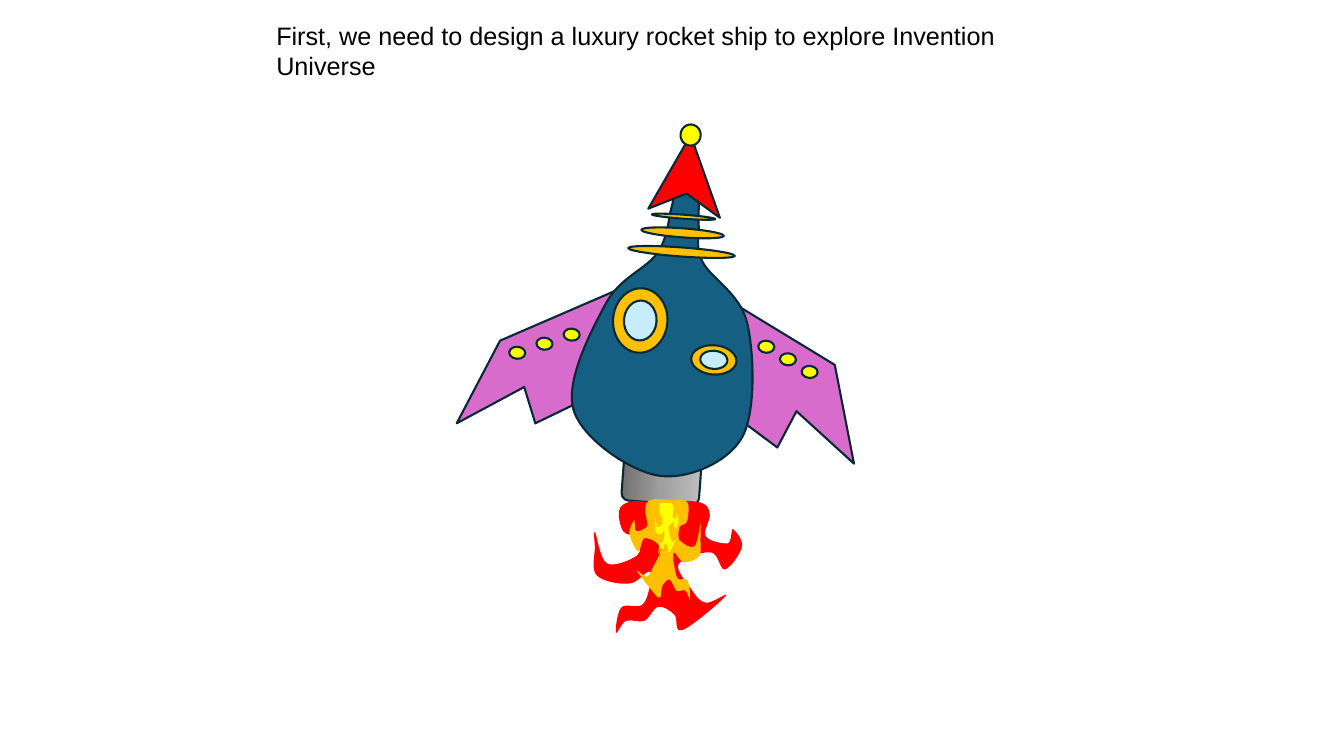
from copy import deepcopy

from lxml import etree
from pptx import Presentation
from pptx.dml.color import RGBColor
from pptx.enum.shapes import MSO_SHAPE
from pptx.enum.text import MSO_ANCHOR, MSO_AUTO_SIZE, PP_ALIGN
from pptx.oxml.ns import qn
from pptx.util import Inches, Pt

OVAL, ROUND_RECT = MSO_SHAPE.OVAL, MSO_SHAPE.ROUNDED_RECTANGLE
TOP, LEFT, GROW = MSO_ANCHOR.TOP, PP_ALIGN.LEFT, MSO_AUTO_SIZE.SHAPE_TO_FIT_TEXT

TITLE = "First, we need to design a luxury rocket ship to explore Invention Universe"
INK, BLUE, PINK, RED = "082836", "156082", "D86CCC", "FF0000"
GOLD, YELLOW, GLASS = "FFC000", "FFFF00", "C7EDFC"
METAL = [(0, "6E6E6E"), (0.5, "9F9F9F"), (1, "BFBFBF")]
TILT = 4.2  # degrees

# Outlines: corners or curve knots as (x, y) on a grid of 1/100 inch
GRID = Inches(0.01)
NOSE = [(685, 134), (643, 207), (681, 192), (714, 216)]
LEFT_WING = [(496, 338), (453, 420), (520, 384), (531, 420), (657, 359)]
RIGHT_WING = [(771, 444), (790, 408), (847, 460), (828, 362)]
WINGS = [(667, 264)] + LEFT_WING + RIGHT_WING

NECK_LEFT, NECK_RIGHT = [(666, 206), (652, 251)], [(697, 260), (693, 223)]
HULL = [(601, 301), (569, 407), (654, 472), (736, 434), (741, 320)]
NECK_TOP = [(691, 191), (671, 189)]
BODY = NECK_LEFT + HULL + NECK_RIGHT + NECK_TOP

FLAME_ROOT = [(692, 498), (647, 498), (624, 498), (614, 507), (618, 527), (633, 534)]
LEFT_TONGUE = [(632, 551), (602, 559), (590, 528), (590, 544), (592, 571),
               (624, 579), (644, 567), (645, 579)]
LOWER_TONGUES = [(637, 600), (616, 603), (611, 628), (621, 616), (639, 616),
                 (653, 602), (669, 610), (677, 625), (720, 591), (700, 598)]
RIGHT_TONGUE = [(686, 585), (673, 560), (705, 548), (719, 565), (736, 542),
                (727, 525), (722, 539), (700, 532), (704, 510)]
FLAME = FLAME_ROOT + LEFT_TONGUE + LOWER_TONGUES + RIGHT_TONGUE

# The same flame fitted into three boxes (left, top, width, height): box, mirrored, colour
FLAME_BOX = (589, 497, 148, 131)
FLAME_LAYERS = [(FLAME_BOX, False, RED),
                ((624, 495, 71, 100), True, GOLD),
                ((650, 499, 23, 50), False, YELLOW)]

# Ovals: centre and size in inches
PORTHOLES = [((6.35, 3.18), (0.54, 0.64)), ((7.08, 3.57), (0.45, 0.29))]
GLASS_SHARE = (0.6, 0.62)
RINGS = [((6.78, 2.15), (0.63, 0.04)), ((6.77, 2.31), (0.82, 0.09)),
         ((6.76, 2.5), (1.06, 0.09))]
TIP = ((6.85, 1.34), (0.2, 0.21))
NOZZLE = ((6.56, 4.77), (0.77, 0.44))
LIGHT_ROWS = [((5.13, 3.5), (5.67, 3.32)), ((7.6, 3.44), (8.03, 3.69))]  # first, last
LIGHTS_PER_WING, LIGHT_SIZE = 3, (0.16, 0.12)


def rgb(color):
    return RGBColor.from_string(color)


def paint(sp, color, line=INK):
    sp.shadow.inherit = False
    sp.fill.solid()
    sp.fill.fore_color.rgb = rgb(color)
    if line:
        sp.line.color.rgb = rgb(line)
        sp.line.width = Pt(1.5)
    else:
        sp.line.fill.background()
    return sp


def tilted(kind, center, size, color):
    corner = [c - s / 2 for c, s in zip(center, size)]
    sp = shapes.add_shape(kind, *map(Inches, (*corner, *size)))
    sp.rotation = TILT
    return paint(sp, color)


def polygon(points, color, line=INK):
    builder = shapes.build_freeform(*points[0], scale=GRID)
    builder.add_line_segments(points[1:], close=True)
    return paint(builder.convert_to_shape(), color, line)


def offset(point, start, end):
    """Move a point by a sixth of the way from start to end."""
    return tuple(p + (e - s) / 6 for p, s, e in zip(point, start, end))


def smooth_outline(knots, color, line=INK):
    """Draw a closed curve whose tangent at each knot runs parallel to its neighbours."""
    points = [knots[0]]
    for i, knot in enumerate(knots):
        before, after, beyond = (knots[(i + k) % len(knots)] for k in (-1, 1, 2))
        points += [offset(knot, before, after), offset(after, beyond, knot), after]
    sp = polygon(points, color, line)
    segments = list(sp._element.iter(qn("a:lnTo")))
    for i in range(0, len(segments), 3):
        curve = etree.Element(qn("a:cubicBezTo"))
        segments[i].addprevious(curve)
        for segment in segments[i:i + 3]:
            curve.append(segment[0])
            segment.getparent().remove(segment)
    return sp


def fit_flame(box, mirrored):
    left, top, width, height = box
    from_left, from_top, from_width, from_height = FLAME_BOX
    knots = []
    for x, y in FLAME:
        across, down = (x - from_left) / from_width, (y - from_top) / from_height
        if mirrored:
            across = 1 - across
        knots.append((left + across * width, top + down * height))
    return knots


def fill_gradient(sp, stops):
    sp.fill.gradient()
    sp.fill.gradient_angle = 0
    gs_list = next(sp._element.iter(qn("a:gsLst")))
    gs_list.insert(1, deepcopy(gs_list[0]))
    for stop, (position, color) in zip(sp.fill.gradient_stops, stops):
        stop.position = position
        stop.color.rgb = rgb(color)


def porthole(center, size):
    glass_size = [s * share for s, share in zip(size, GLASS_SHARE)]
    return [tilted(OVAL, center, size, GOLD), tilted(OVAL, center, glass_size, GLASS)]


def light_row(first, last):
    shares = [i / (LIGHTS_PER_WING - 1) for i in range(LIGHTS_PER_WING)]
    centers = [[a + (b - a) * t for a, b in zip(first, last)] for t in shares]
    return [tilted(OVAL, center, LIGHT_SIZE, YELLOW) for center in centers]


prs = Presentation()
prs.slide_width, prs.slide_height = Inches(13.33), Inches(7.5)
slide = prs.slides.add_slide(prs.slide_layouts[5])
shapes = slide.shapes

title = shapes.title
title.left, title.top, title.width, title.height = map(Inches, (2.64, 0.15, 8, 0.4))
tf = title.text_frame
tf.text = TITLE
tf.word_wrap, tf.auto_size, tf.vertical_anchor = True, GROW, TOP
p = tf.paragraphs[0]
p.alignment = LEFT
font = p.runs[0].font
font.name, font.size, font.color.rgb = "Arial", Pt(18), rgb("000000")

nozzle = tilted(ROUND_RECT, *NOZZLE, METAL[1][1])
fill_gradient(nozzle, METAL)
rocket = [nozzle, polygon(WINGS, PINK), smooth_outline(BODY, BLUE)]
for center, size in PORTHOLES:
    rocket += porthole(center, size)
rocket.append(polygon(NOSE, RED))
rocket += [tilted(OVAL, center, size, GOLD) for center, size in RINGS]
rocket.append(tilted(OVAL, *TIP, YELLOW))
for first, last in LIGHT_ROWS:
    rocket += light_row(first, last)
shapes.add_group_shape(rocket)

flames = [smooth_outline(fit_flame(box, mirrored), color, line=None)
          for box, mirrored, color in FLAME_LAYERS]
shapes.add_group_shape(flames)

prs.save("out.pptx")
